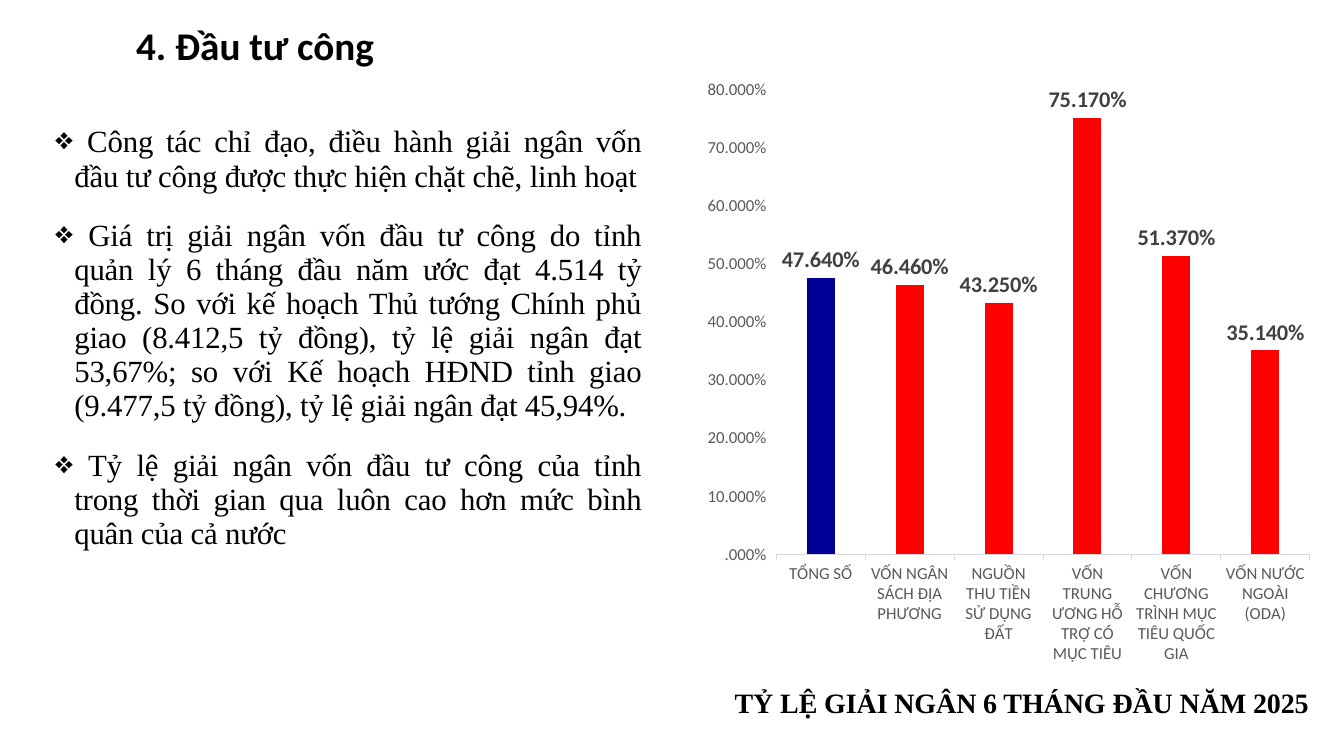
from lxml import etree
from pptx import Presentation, util as u
from pptx.chart.data import CategoryChartData
from pptx.dml.color import RGBColor
from pptx.enum import chart as ch, text
from pptx.oxml import ns

SERIF = "Times New Roman"
SANS = "Calibri"
PERCENT = "#.000%"


def style(font, name, size, color, bold=False):
    font.name = name
    font.size = u.Pt(size)
    font.bold = bold
    font.color.rgb = RGBColor.from_string(color)


def add_cell(left, top, width, height):
    table = slide.shapes.add_table(1, 1, u.Cm(left), u.Cm(top), u.Cm(width), u.Cm(height)).table
    table.first_row = False
    table.horz_banding = False
    cell = table.cell(0, 0)
    cell.fill.background()
    cell.vertical_anchor = text.MSO_ANCHOR.MIDDLE
    return cell


presentation = Presentation()
presentation.slide_width = u.Cm(33.87)
presentation.slide_height = u.Cm(19.05)
slide = presentation.slides.add_slide(presentation.slide_layouts[6])

title = slide.shapes.add_textbox(u.Cm(3.18), u.Cm(0.4), u.Cm(10.62), u.Cm(1.45))
title.text_frame.word_wrap = True
title.text_frame.text = "4. Đầu tư công"
style(title.text_frame.paragraphs[0].font, SANS, 28, "000000", True)

points = [
    " Công tác chỉ đạo, điều hành giải ngân vốn đầu tư công được thực hiện chặt chẽ, linh hoạt",
    " Giá trị giải ngân vốn đầu tư công do tỉnh quản lý 6 tháng đầu năm ước đạt 4.514 tỷ đồng. "
    "So với kế hoạch Thủ tướng Chính phủ giao (8.412,5 tỷ đồng), tỷ lệ giải ngân đạt 53,67%; "
    "so với Kế hoạch HĐND tỉnh giao (9.477,5 tỷ đồng), tỷ lệ giải ngân đạt 45,94%.",
    " Tỷ lệ giải ngân vốn đầu tư công của tỉnh trong thời gian qua luôn cao hơn mức bình quân của cả nước",
]
points_frame = add_cell(1.14, 2.64, 15.29, 11.76).text_frame
for index, point in enumerate(points):
    paragraph = points_frame.add_paragraph() if index else points_frame.paragraphs[0]
    run = paragraph.add_run()
    run.text = point
    run._r.get_or_add_rPr().set("spc", "-10")
    properties = paragraph._p.get_or_add_pPr()
    properties.set("marL", str(u.Cm(0.48)))
    properties.set("indent", str(u.Cm(-0.48)))
    paragraph.alignment = text.PP_ALIGN.JUSTIFY
    paragraph.space_after = u.Pt(6)
    if index:
        paragraph.space_before = u.Pt(12)
    etree.SubElement(properties, ns.qn("a:buChar")).set("char", "❖")
    style(paragraph.font, SERIF, 22, "000000")

caption_cell = add_cell(17.58, 17.07, 16.18, 1.27)
caption_cell.margin_top = u.Cm(0.2)
caption_cell.margin_left = u.Cm(0.4)
caption = caption_cell.text_frame.paragraphs[0]
caption_run = caption.add_run()
caption_run.text = "TỶ LỆ GIẢI NGÂN 6 THÁNG ĐẦU NĂM 2025"
caption_run._r.get_or_add_rPr().set("spc", "-10")
caption.alignment = text.PP_ALIGN.CENTER
style(caption.font, SERIF, 20, "000000", True)

rates = {
    "TỔNG SỐ": 0.4764,
    "VỐN NGÂN SÁCH ĐỊA PHƯƠNG": 0.4646,
    "NGUỒN THU TIỀN SỬ DỤNG ĐẤT": 0.4325,
    "VỐN TRUNG ƯƠNG HỖ TRỢ CÓ MỤC TIÊU": 0.7517,
    "VỐN CHƯƠNG TRÌNH MỤC TIÊU QUỐC GIA": 0.5137,
    "VỐN NƯỚC NGOÀI (ODA)": 0.3514,
}
data = CategoryChartData(number_format=PERCENT)
data.categories = list(rates)
data.add_series("Series 1", list(rates.values()))
chart = slide.shapes.add_chart(
    ch.XL_CHART_TYPE.COLUMN_CLUSTERED, u.Cm(17.83), u.Cm(1.63), u.Cm(15.65), u.Cm(15.82), data
).chart
chart.has_legend = False
chart.has_title = False
style(chart.font, SANS, 10, "000000")

for axis in (chart.category_axis, chart.value_axis):
    axis.has_major_gridlines = False
    axis.major_tick_mark = ch.XL_TICK_MARK.OUTSIDE
    style(axis.tick_labels.font, SANS, 12, "595959")
chart.category_axis.format.line.color.rgb = RGBColor.from_string("D9D9D9")
chart.category_axis.format.line.width = u.Pt(0.75)
value_axis = chart.value_axis
value_axis.format.line.fill.background()
value_axis.minimum_scale = 0
value_axis.maximum_scale = 0.8
value_axis.major_unit = 0.1
value_axis.tick_labels.number_format = PERCENT
value_axis.tick_labels.number_format_is_linked = False

plot = chart.plots[0]
plot.gap_width = 219
plot.overlap = -27
plot.vary_by_categories = False
series = plot.series[0]
for part, color in ((series, "FF0000"), (series.points[0], "000099")):
    part.format.fill.solid()
    part.format.fill.fore_color.rgb = RGBColor.from_string(color)
labels = series.data_labels
labels.show_value = True
labels.position = ch.XL_LABEL_POSITION.OUTSIDE_END
labels.number_format = PERCENT
labels.number_format_is_linked = False
style(labels.font, SANS, 16, "404040", True)

plot_area = chart._chartSpace.chart.plotArea
for old_layout in plot_area.findall(ns.qn("c:layout")):
    plot_area.remove(old_layout)
layout = etree.Element(ns.qn("c:layout"))
manual = etree.SubElement(layout, ns.qn("c:manualLayout"))
settings = {"layoutTarget": "inner", "xMode": "edge", "yMode": "edge",
            "x": 0.11, "y": 0.04, "w": 0.86, "h": 0.74}
for name, value in settings.items():
    etree.SubElement(manual, ns.qn("c:" + name)).set("val", str(value))
plot_area.insert(0, layout)

presentation.save("out.pptx")
